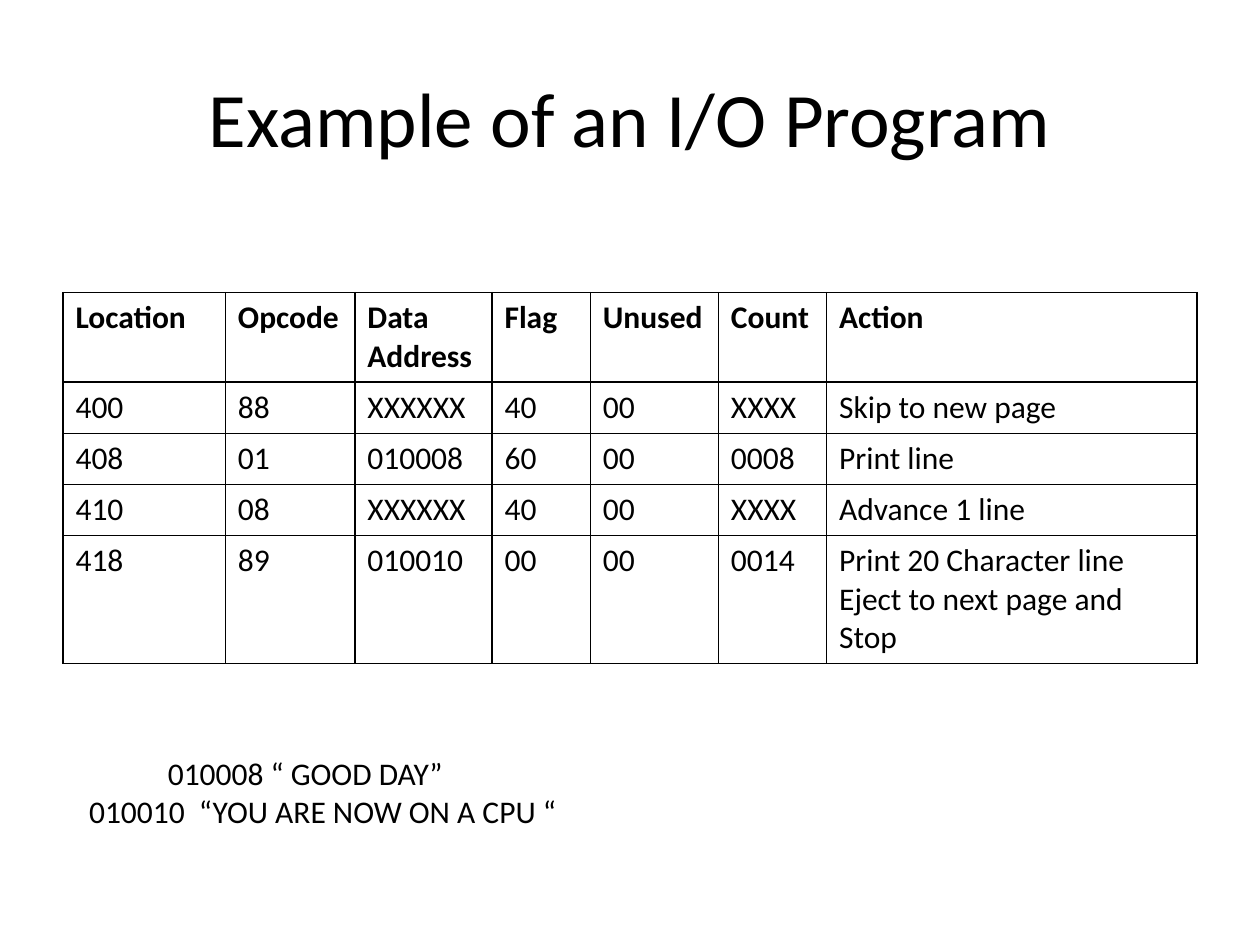
from lxml.etree import SubElement
from pptx import Presentation
from pptx.dml.color import RGBColor
from pptx.enum.text import MSO_ANCHOR, PP_ALIGN
from pptx.oxml.ns import qn
from pptx.util import Pt

COLORS = {"text": "000000", "border": "000000", "cell": "FFFFFF"}
FONT = "Calibri"
COLUMN_WIDTHS = [92.8, 74, 78.4, 56.2, 73.2, 61.8, 211.6]
ROW_HEIGHTS = [51.2, 29.2, 29.2, 29.2, 73.2]
PROGRAM = [
    ["Location", "Opcode", "Data Address", "Flag", "Unused", "Count", "Action"],
    ["400", "88", "XXXXXX", "40", "00", "XXXX", "Skip to new page"],
    ["408", "01", "010008", "60", "00", "0008", "Print line"],
    ["410", "08", "XXXXXX", "40", "00", "XXXX", "Advance 1 line"],
    ["418", "89", "010010", "00", "00", "0014",
     "Print 20 Character line Eject to next page and Stop"],
]
MEMORY_LINES = [("010008 “ GOOD DAY”", 72), ("010010  “YOU ARE NOW ON A CPU “", 27)]


def format_runs(paragraph, size, bold=False):
    """Apply the slide's font to every run of a paragraph."""
    for run in paragraph.runs:
        run.font.name = FONT
        run.font.size = Pt(size)
        run.font.bold = bold
        run.font.color.rgb = RGBColor.from_string(COLORS["text"])


def add_title(slide, text):
    """Place and format the title placeholder."""
    title = slide.shapes.title
    title.left, title.top, title.width, title.height = Pt(36), Pt(21.6), Pt(648), Pt(90)
    title.text_frame.text = text
    title.text_frame.vertical_anchor = MSO_ANCHOR.MIDDLE
    paragraph = title.text_frame.paragraphs[0]
    paragraph.alignment = PP_ALIGN.CENTER
    format_runs(paragraph, 44)


def set_borders(cell):
    """Draw a one-point line on all four sides of a cell."""
    properties = cell._tc.get_or_add_tcPr()
    for position, side in enumerate(("a:lnL", "a:lnR", "a:lnT", "a:lnB")):
        line = SubElement(properties, qn(side), w=str(Pt(1)))
        fill = SubElement(line, qn("a:solidFill"))
        SubElement(fill, qn("a:srgbClr"), val=COLORS["border"])
        properties.insert(position, line)


def add_program_table(slide):
    """Add the table of channel commands."""
    table = slide.shapes.add_table(
        len(PROGRAM), len(COLUMN_WIDTHS), Pt(36), Pt(167.2),
        Pt(sum(COLUMN_WIDTHS)), Pt(sum(ROW_HEIGHTS))).table
    table.horz_banding = False
    for column, width in zip(table.columns, COLUMN_WIDTHS):
        column.width = Pt(width)
    for row, height, values in zip(table.rows, ROW_HEIGHTS, PROGRAM):
        row.height = Pt(height)
        for cell, value in zip(row.cells, values):
            cell.text_frame.text = value
            format_runs(cell.text_frame.paragraphs[0], 18, values is PROGRAM[0])
            cell.fill.solid()
            cell.fill.fore_color.rgb = RGBColor.from_string(COLORS["cell"])
            set_borders(cell)


def add_memory_text(slide):
    """Add the indented lines showing the stored data."""
    shape = slide.shapes.add_textbox(Pt(16.8), Pt(427.5), Pt(326), Pt(72.7))
    shape.text_frame.word_wrap = True
    shape.text_frame.text = "\n".join(text for text, _ in MEMORY_LINES)
    for paragraph, (_, indent) in zip(shape.text_frame.paragraphs, MEMORY_LINES):
        paragraph._p.get_or_add_pPr().set("marL", str(Pt(indent)))
        format_runs(paragraph, 18)


def main():
    """Build and save the slide."""
    presentation = Presentation()
    presentation.slide_width, presentation.slide_height = Pt(720), Pt(540)
    slide = presentation.slides.add_slide(presentation.slide_layouts[5])
    add_title(slide, "Example of an I/O Program")
    add_program_table(slide)
    add_memory_text(slide)
    presentation.save("out.pptx")


if __name__ == "__main__":
    main()
